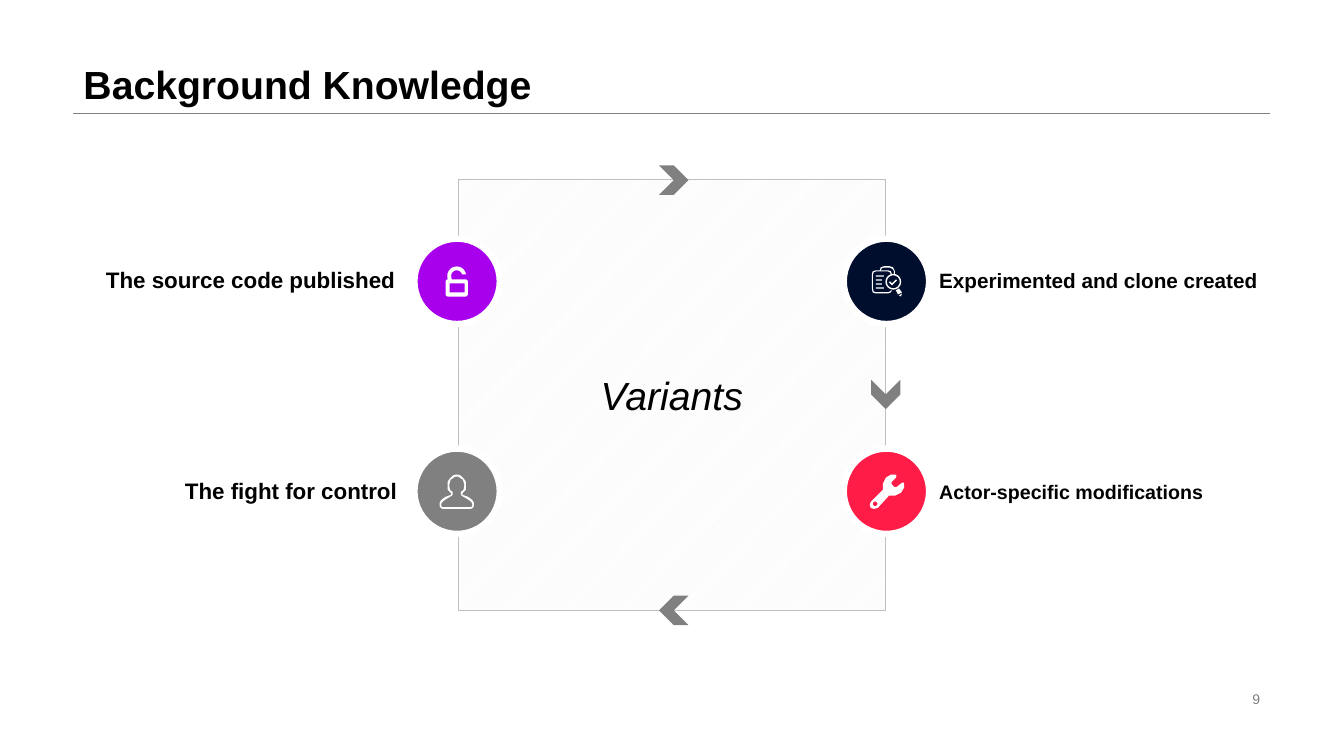
import math

import pptx
import pptx.dml.color
import pptx.enum.dml
import pptx.enum.shapes
import pptx.enum.text
import pptx.util
from lxml import etree

Cm, Pt = pptx.util.Cm, pptx.util.Pt
SHAPE = pptx.enum.shapes.MSO_SHAPE
ALIGN = pptx.enum.text.PP_ALIGN
ANCHOR = pptx.enum.text.MSO_ANCHOR


def arc(cx, cy, r, start=0, end=360, steps=24):
    """Points on a circle, angles in degrees, clockwise on the slide."""
    angles = [math.radians(start + (end - start) * i / steps) for i in range(steps + 1)]
    return [(cx + r * math.cos(a), cy + r * math.sin(a)) for a in angles]


def box(x, y, w, h):
    return [(x, y), (x + w, y), (x + w, y + h), (x, y + h)]


def mirrored(half, width):
    """Closes a right half with its reflection."""
    return half + [(width - x, y) for x, y in reversed(half)]


# Icon contours, in units of ICON_UNIT from the icon's top left corner
ICON_UNIT = Cm(0.0254)
PADLOCK = [
    [(20, 13), (6, 13), *arc(11, 9.5, 5.5, 180, 345), (20, 8), *arc(11, 9.5, 9.3, -15, -180),
     (2, 13), (0.6, 13.6), (0, 15), (0, 28), (0.6, 29.4), (2, 30),
     (20, 30), (21.4, 29.4), (22, 28), (22, 15), (21.4, 13.6)],
    box(4, 17, 15, 9),
]
REPORT = [
    [(19, 24), (20, 24), (19, 26), (16, 27), (4, 27), (1, 26), (0, 22), (0, 8), (1, 5), (4, 4),
     (8, 4), (9, 1), (12, 0), (18, 0), (21, 1), (23, 5), (23, 8), (22, 8), (22, 5), (21, 3),
     (18, 1.3), (12, 1.3), (10, 2), (9, 4), (16, 4), (19, 5), (20, 8), (19, 8), (18, 6),
     (16, 5.2), (4, 5.2), (2, 6), (1.2, 8), (1.2, 22), (2, 25), (4, 25.8), (16, 25.8), (18, 25)],
    arc(21.4, 15.4, 7.8), arc(21.4, 15.4, 6.4),
    [(27, 22), (24, 24), (26, 28), (30, 26)],
    [(30, 27), (27, 29), (29, 30)],
    *[box(4, 9 + 4 * row, w, 1.2) for row, w in enumerate((8, 6, 6, 8))],
    [(20, 17), (18, 15), (17, 16), (20, 19), (25, 14), (24, 13)],
]
PERSON = [
    mirrored([(17, 0), (19, 0.2), (21, 1), (24, 4), (26, 7), (26, 11), (26, 15), (25, 16),
              (23, 18), (22.5, 20), (28, 22), (31, 24), (33, 26), (34, 28), (34, 31),
              (33, 33), (31, 34)], 34),
    mirrored([(17, 2), (19, 2.2), (20, 3), (23, 5), (24, 8), (24.5, 11), (24, 14), (23, 16),
              (21, 17), (21, 20), (22, 21), (27, 24), (30, 26), (32, 28), (32.5, 30),
              (32, 31.8), (31, 32.2)], 34),
]
WRENCH = [
    [(34, 9), (33.4, 7.8), (32, 8), (27, 12), (25.5, 12.6), (24, 12), (22, 10), (21.4, 8.5),
     (22, 7), (26, 3), (26.5, 1), (26, 0), (21, 0), (16, 3), (13, 9), (13, 15), (1, 27),
     (0, 30), (1, 33), (4, 34), (8, 33), (19, 21), (25, 21), (31, 18), (34, 13)],
    arc(5.3, 29, 2.3),
]

TITLE = "Background Knowledge"
CENTRE_WORD = "Variants"
PAGE = "9"
# label, size, label box (left, middle, width), alignment
# circle column and row, circle colour, icon, icon left and top
STEPS = [
    ("Experimented and clone created", 14.8, (23.42, 7.07, 8.59), ALIGN.LEFT,
     1, 0, "000E2D", REPORT, (21.97, 6.71)),
    ("The source code published", 16, (2.06, 7.04, 8.15), ALIGN.RIGHT,
     0, 0, "A800EC", PADLOCK, (11.23, 6.71)),
    ("Actor-specific modifications", 14, (23.42, 12.4, 8.08), ALIGN.LEFT,
     1, 1, "FF1C47", WRENCH, (21.92, 11.96)),
    ("The fight for control", 16, (2.11, 12.35, 8.15), ALIGN.RIGHT,
     0, 1, "808080", PERSON, (11.08, 11.96)),
]
FRAME = (11.56, 4.52, 10.74, 10.85)
COLUMNS, ROWS = (11.52, 22.34), (7.09, 12.38)
CIRCLE, CHEVRON, LABEL_HEIGHT = 2.15, 0.74, 1.22
CHEVRONS = [(16.98, 4.54, 0), (16.98, 15.38, 180), (22.32, 9.94, 90)]


def rgb(value):
    return pptx.dml.color.RGBColor.from_string(value)


def write(s, text, size, align=ALIGN.LEFT, color="000000", anchor=ANCHOR.MIDDLE, **style):
    tf = s.text_frame
    tf.word_wrap = True
    tf.auto_size = pptx.enum.text.MSO_AUTO_SIZE.NONE
    tf.vertical_anchor = anchor
    p = tf.paragraphs[0]
    p.alignment = align
    r = p.add_run()
    r.text = text
    for name, value in {"name": "Arial", "size": Pt(size), **style}.items():
        setattr(r.font, name, value)
    r.font.color.rgb = rgb(color)
    return p


def add_label(slide, left, top, width, height, *args, **style):
    s = slide.shapes.add_textbox(Cm(left), Cm(top), Cm(width), Cm(height))
    write(s, *args, **style)


def paint(s, fill=None, line=None, width=0):
    s.shadow.inherit = False
    if fill:
        s.fill.solid()
        s.fill.fore_color.rgb = rgb(fill)
    if line:
        s.line.color.rgb = rgb(line)
        s.line.width = Pt(width)
    else:
        s.line.fill.background()


def add_centred(slide, kind, x, y, size):
    return slide.shapes.add_shape(
        kind, Cm(x - size / 2), Cm(y - size / 2), Cm(size), Cm(size))


def add_icon(slide, contours, left, top):
    placed = [[(Cm(left) + x * ICON_UNIT, Cm(top) + y * ICON_UNIT) for x, y in contour]
              for contour in contours]
    builder = slide.shapes.build_freeform(*placed[0][0])
    for i, contour in enumerate(placed):
        if i:
            builder.move_to(*contour[0])
        builder.add_line_segments(contour[1:], close=True)
    paint(builder.convert_to_shape(), "FFFFFF")


def add_title(slide):
    s = slide.shapes.title
    place = {"left": 1.85, "top": 0, "width": 30.15, "height": 2.84}
    for name, value in place.items():
        setattr(s, name, Cm(value))
    p = write(s, TITLE, 28, anchor=ANCHOR.BOTTOM, bold=True)
    p.line_spacing = 0.9
    rule = slide.shapes.add_connector(
        pptx.enum.shapes.MSO_CONNECTOR.STRAIGHT, Cm(1.85), Cm(2.85), Cm(32), Cm(2.85))
    rule.line.color.rgb = rgb("808080")
    rule.line.width = Pt(0.25)
    etree.SubElement(rule._element.spPr, pptx.oxml.ns.qn("a:effectLst"))


def add_frame(slide):
    s = slide.shapes.add_shape(SHAPE.RECTANGLE, *map(Cm, FRAME))
    s.fill.patterned()
    s.fill.pattern = pptx.enum.dml.MSO_PATTERN.DARK_UPWARD_DIAGONAL
    s.fill.fore_color.rgb = rgb("F2F2F2")
    s.fill.back_color.rgb = rgb("FFFFFF")
    paint(s, line="BFBFBF", width=0.25)
    write(s, CENTRE_WORD, 28, ALIGN.CENTER, italic=True)


def main():
    prs = pptx.Presentation()
    prs.slide_width, prs.slide_height = Cm(33.87), Cm(19.05)
    slide = prs.slides.add_slide(prs.slide_layouts[5])
    add_title(slide)
    add_label(slide, 23.93, 17.32, 8.08, 0.58, PAGE, 10, ALIGN.RIGHT, "808080")
    add_frame(slide)
    for text, size, (left, middle, width), align, col, row, color, icon, corner in STEPS:
        circle = add_centred(slide, SHAPE.OVAL, COLUMNS[col], ROWS[row], CIRCLE)
        paint(circle, color, "FFFFFF", 4.5)
        add_icon(slide, icon, *corner)
        add_label(slide, left, middle - LABEL_HEIGHT / 2, width, LABEL_HEIGHT,
                  text, size, align, bold=True)
    for x, y, rotation in CHEVRONS:
        s = add_centred(slide, SHAPE.CHEVRON, x, y, CHEVRON)
        s.rotation = rotation
        paint(s, "808080")
    prs.save("out.pptx")


if __name__ == "__main__":
    main()
